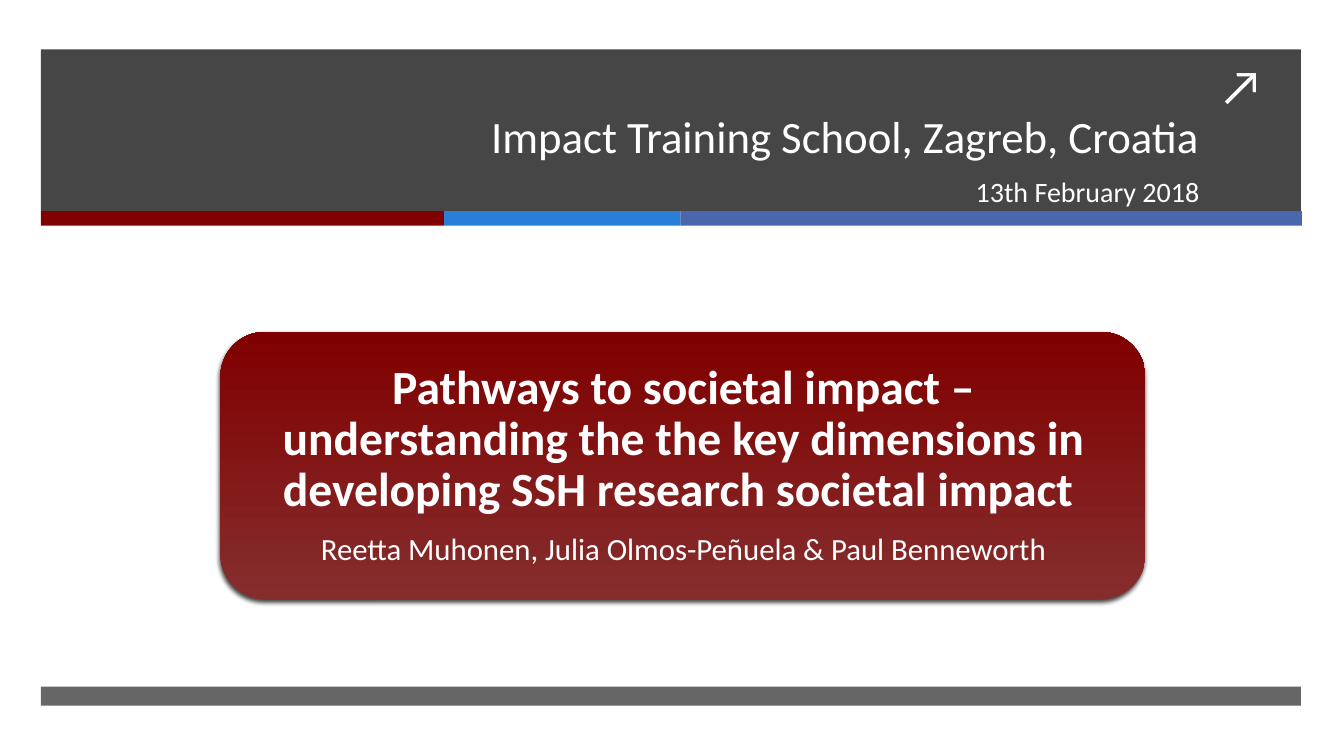
from dataclasses import dataclass

from lxml.etree import SubElement
from pptx import Presentation
from pptx.dml.color import RGBColor
from pptx.enum.shapes import MSO_SHAPE
from pptx.enum.text import MSO_ANCHOR, MSO_AUTO_SIZE, PP_ALIGN
from pptx.oxml.ns import qn
from pptx.util import Emu, Pt

PX = 9525  # EMU in one px, 96 px to the inch
FONT = "Calibri"
WHITE = RGBColor(0xFF, 0xFF, 0xFF)
CHARCOAL = RGBColor(0x26, 0x26, 0x26)
MAROON = RGBColor(0x80, 0x00, 0x00)
SOFT_MAROON = RGBColor(0x85, 0x2D, 0x2D)
BRIGHT_BLUE = RGBColor(0x29, 0x7F, 0xD5)
SLATE_BLUE = RGBColor(0x4A, 0x66, 0xAC)


@dataclass(frozen=True)
class Area:
    left: int
    top: int
    width: int
    height: int

    def emu(self) -> list[Emu]:
        return [Emu(side * PX) for side in (self.left, self.top, self.width, self.height)]


@dataclass(frozen=True)
class Bar:
    area: Area
    color: RGBColor
    opacity: int = 100


@dataclass(frozen=True)
class Line:
    text: str
    size: int
    bold: bool = False


BARS = [
    Bar(Area(39, 47, 1200, 154), CHARCOAL, 85),
    Bar(Area(39, 201, 384, 14), MAROON),
    Bar(Area(423, 201, 225, 14), BRIGHT_BLUE),
    Bar(Area(648, 201, 592, 14), SLATE_BLUE),
    Bar(Area(39, 654, 1200, 18), CHARCOAL, 70),
]
CARD = Area(210, 316, 881, 255)
CARD_LINES = [
    Line("Pathways to societal impact – understanding the the key dimensions "
         "in developing SSH research societal impact ", 34, True),
    Line("Reetta Muhonen, Julia Olmos-Peñuela & Paul Benneworth", 22),
]


def set_all(target, values: dict) -> None:
    for name, value in values.items():
        setattr(target, name, value)


def set_opacity(color_element, percent: int) -> None:
    SubElement(color_element, qn("a:alpha")).set("val", str(percent * 1000))


def draw_bar(page, bar: Bar) -> None:
    box = page.shapes.add_shape(MSO_SHAPE.RECTANGLE, *bar.area.emu())
    box.shadow.inherit = False
    box.line.fill.background()
    box.fill.solid()
    box.fill.fore_color.rgb = bar.color
    if bar.opacity < 100:
        set_opacity(box.element.spPr.find(f".//{qn('a:srgbClr')}"), bar.opacity)


def draw_card(page, area: Area) -> None:
    box = page.shapes.add_shape(MSO_SHAPE.ROUNDED_RECTANGLE, *area.emu())
    box.line.fill.background()
    box.fill.gradient()
    box.fill.gradient_angle = 90
    for stop, color in zip(box.fill.gradient_stops, (SOFT_MAROON, MAROON)):
        stop.color.rgb = color
    # Soft shadow below the card
    box.shadow.inherit = False
    effects = box.element.spPr.find(qn("a:effectLst"))
    shadow = SubElement(effects, qn("a:outerShdw"), blurRad=str(Pt(3)),
                        dist=str(Pt(2)), dir=str(110 * 60000), rotWithShape="0")
    set_opacity(SubElement(shadow, qn("a:srgbClr"), val="000000"), 75)


def write(box, lines: list[Line], frame_format: dict, para_format: dict) -> None:
    frame = box.text_frame
    set_all(frame, {"word_wrap": True, "auto_size": MSO_AUTO_SIZE.NONE} | frame_format)
    for index, line in enumerate(lines):
        para = frame.add_paragraph() if index else frame.paragraphs[0]
        set_all(para, para_format)
        span = para.add_run()
        span.text = line.text
        set_all(span.font, {"name": FONT, "size": Pt(line.size), "bold": line.bold})
        span.font.color.rgb = WHITE


def main() -> None:
    deck = Presentation()
    set_all(deck, {"slide_width": Emu(1280 * PX), "slide_height": Emu(720 * PX)})
    page = deck.slides.add_slide(deck.slide_layouts[5])

    # Header and footer bars
    for bar in BARS:
        draw_bar(page, bar)
    arrow = page.shapes.add_textbox(*Area(1152, 47, 61, 68).emu())
    write(arrow, [Line("↗", 36)], {"word_wrap": False}, {})

    # Title, brought in front of the header bar, and date
    title = page.shapes.title
    page.shapes.element.append(title.element)
    set_all(title, dict(zip(("left", "top", "width", "height"),
                            Area(59, 47, 1093, 113).emu())))
    write(title, [Line("Impact Training School, Zagreb, Croatia", 32)],
          {"vertical_anchor": MSO_ANCHOR.BOTTOM},
          {"alignment": PP_ALIGN.RIGHT, "line_spacing": Pt(46)})
    date = page.shapes.add_textbox(*Area(66, 161, 1086, 51).emu())
    write(date, [Line("13th February 2018", 20)], {}, {"alignment": PP_ALIGN.RIGHT})

    # Talk card
    draw_card(page, CARD)
    talk = page.shapes.add_textbox(*Area(223, 328, 856, 230).emu())
    margins = {f"margin_{side}": Emu(13 * PX) for side in ("left", "top", "right", "bottom")}
    write(talk, CARD_LINES, {"vertical_anchor": MSO_ANCHOR.MIDDLE} | margins,
          {"alignment": PP_ALIGN.CENTER, "line_spacing": 0.9, "space_after": Pt(12)})

    deck.save("out.pptx")


if __name__ == "__main__":
    main()
